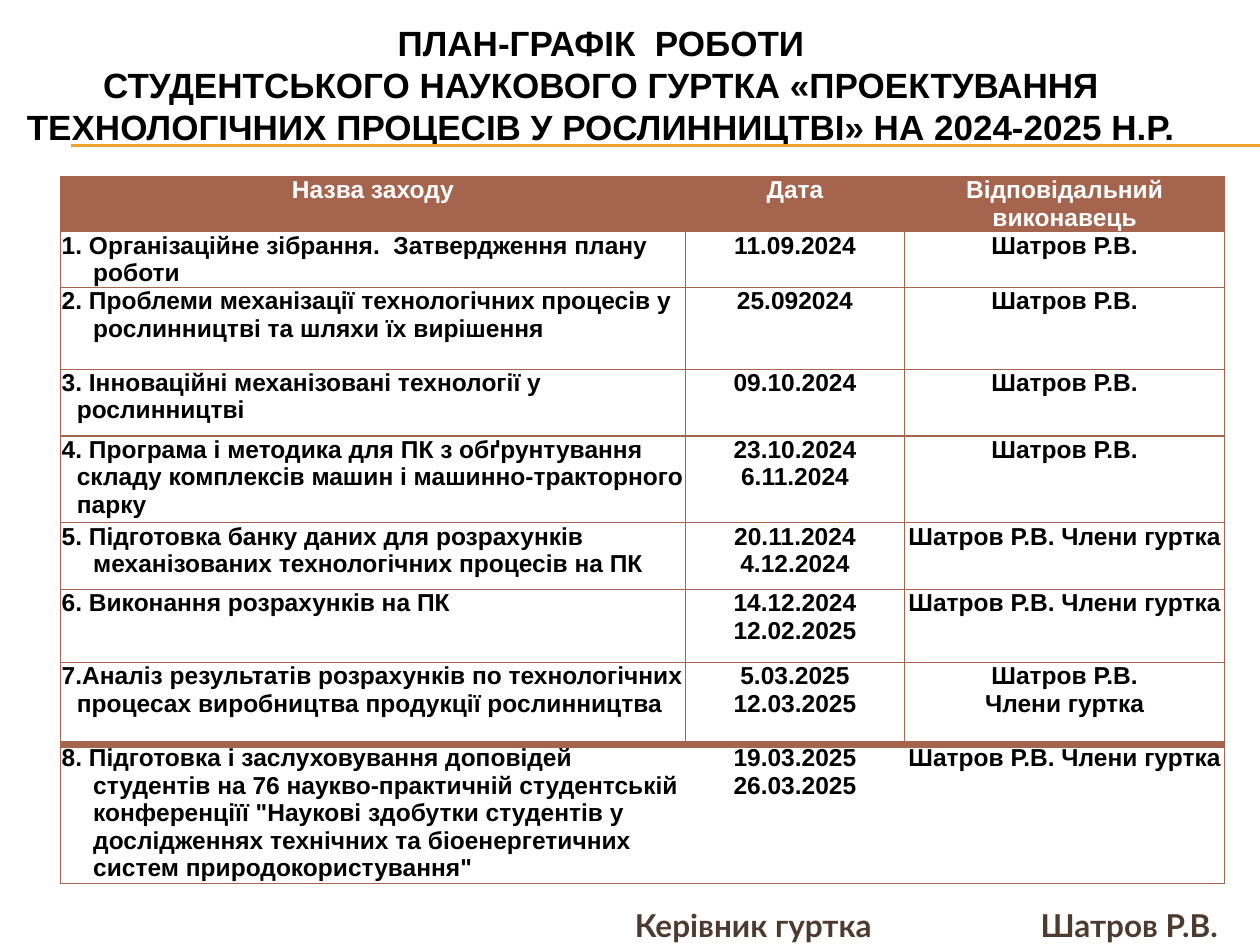
from dataclasses import dataclass

from lxml import etree
from pptx import Presentation
from pptx.dml.color import RGBColor
from pptx.enum.shapes import MSO_CONNECTOR
from pptx.enum.text import MSO_ANCHOR, MSO_AUTO_SIZE, PP_ALIGN
from pptx.oxml.ns import qn
from pptx.util import Inches, Pt

CENTER, LEFT = PP_ALIGN.CENTER, PP_ALIGN.LEFT
MIDDLE, TOP = MSO_ANCHOR.MIDDLE, MSO_ANCHOR.TOP
TITLE_ONLY = 5


@dataclass(frozen=True)
class Theme:
    text: str = "000000"
    header_text: str = "FFFFFF"
    table: str = "A5644E"
    rule: str = "F0A22E"
    signature: str = "4E3B30"
    font: str = "Arial"
    signature_font: str = "Lato"
    title_size: int = 20
    table_size: int = 14
    signature_size: int = 18
    border: float = 0.79
    thick_border: float = 4
    rule_width: float = 0.75


LEADER = "Шатров Р.В."
LEADER_AND_MEMBERS = "Шатров Р.В. Члени гуртка"
HEADERS = ["Назва заходу", "Дата", "Відповідальний виконавець"]
COLUMN_WIDTHS = [4.96, 1.74, 2.54]
HEADER_HEIGHT = 0.44
# Activity, hanging indent, dates, responsible person, row height
ACTIVITIES = [
    ("1. Організаційне зібрання.  Затвердження плану роботи",
     0.25, "11.09.2024", LEADER, 0.44),
    ("2. Проблеми механізації технологічних процесів у рослинництві та шляхи їх вирішення",
     0.25, "25.092024", LEADER, 0.65),
    ("3. Інноваційні механізовані технології у рослинництві",
     0.12, "09.10.2024", LEADER, 0.53),
    ("4. Програма і методика для ПК з обґрунтування складу комплексів машин "
     "і машинно-тракторного парку",
     0.12, "23.10.2024\n6.11.2024", LEADER, 0.69),
    ("5. Підготовка банку даних для розрахунків механізованих технологічних процесів на ПК",
     0.25, "20.11.2024\n4.12.2024", LEADER_AND_MEMBERS, 0.53),
    ("6. Виконання розрахунків на ПК",
     0, "14.12.2024\n12.02.2025", LEADER_AND_MEMBERS, 0.58),
    ("7.Аналіз результатів розрахунків по технологічних процесах виробництва "
     "продукції рослинництва",
     0.12, "5.03.2025\n12.03.2025", "Шатров Р.В.\nЧлени гуртка", 0.65),
    ("8. Підготовка і заслуховування доповідей студентів на 76 наукво-практичній "
     "студентській конференціїї \"Наукові здобутки студентів у дослідженнях технічних "
     "та біоенергетичних систем природокористування\"",
     0.25, "19.03.2025\v26.03.2025", LEADER_AND_MEMBERS, 1.1),
]


class SlideBuilder:
    def __init__(self, slide, theme):
        self.slide = slide
        self.theme = theme

    def style(self, paragraph, size, color, alignment, font=None):
        paragraph.alignment = alignment
        paragraph.font.name = font or self.theme.font
        paragraph.font.size = Pt(size)
        paragraph.font.bold = True
        paragraph.font.color.rgb = RGBColor.from_string(color)

    def title(self, text, left, top, width, height):
        shape = self.slide.shapes.title
        shape.left, shape.top = Inches(left), Inches(top)
        shape.width, shape.height = Inches(width), Inches(height)
        frame = shape.text_frame
        frame.word_wrap = True
        frame.auto_size = MSO_AUTO_SIZE.NONE
        frame.vertical_anchor = MIDDLE
        paragraph = frame.paragraphs[0]
        paragraph.text = text
        self.style(paragraph, self.theme.title_size, self.theme.text, CENTER)

    def rule(self, left, right, top):
        line = self.slide.shapes.add_connector(
            MSO_CONNECTOR.STRAIGHT, Inches(left), Inches(top), Inches(right), Inches(top))
        line.line.color.rgb = RGBColor.from_string(self.theme.rule)
        line.line.width = Pt(self.theme.rule_width)
        etree.SubElement(line._element.spPr, qn("a:effectLst"))

    def borders(self, cell, widths):
        """Set left, right, top and bottom lines; a width of 0 hides a line."""
        properties = cell._tc.get_or_add_tcPr()
        for index, (side, width) in enumerate(zip("LRTB", widths)):
            line = etree.Element(qn(f"a:ln{side}"), w=str(Pt(width)))
            if width:
                fill = etree.SubElement(line, qn("a:solidFill"))
                etree.SubElement(fill, qn("a:srgbClr"), val=self.theme.table)
            else:
                etree.SubElement(line, qn("a:noFill"))
            properties.insert(index, line)

    def cell(self, cell, text, color, alignment=CENTER, indent=0):
        cell.margin_left = cell.margin_right = Inches(0.01)
        cell.margin_top = cell.margin_bottom = 0
        cell.vertical_anchor = TOP
        cell.text = text
        for paragraph in cell.text_frame.paragraphs:
            self.style(paragraph, self.theme.table_size, color, alignment)
            if indent:
                properties = paragraph._p.get_or_add_pPr()
                properties.set("marL", str(Inches(indent)))
                properties.set("indent", str(-Inches(indent)))

    def schedule(self, left, top):
        theme = self.theme
        heights = [HEADER_HEIGHT] + [activity[-1] for activity in ACTIVITIES]
        table = self.slide.shapes.add_table(
            len(heights), len(COLUMN_WIDTHS), Inches(left), Inches(top),
            Inches(sum(COLUMN_WIDTHS)), Inches(sum(heights))).table
        for column, width in zip(table.columns, COLUMN_WIDTHS):
            column.width = Inches(width)
        for row, height in zip(table.rows, heights):
            row.height = Inches(height)

        for column, header in enumerate(HEADERS):
            self.cell(table.cell(0, column), header, theme.header_text)
        for row, (name, indent, dates, person, _) in enumerate(ACTIVITIES, 1):
            self.cell(table.cell(row, 0), name, theme.text, LEFT, indent)
            self.cell(table.cell(row, 1), dates, theme.text)
            self.cell(table.cell(row, 2), person, theme.text)

        last_row, last_column = len(heights) - 1, len(COLUMN_WIDTHS) - 1
        for row in range(len(heights)):
            inner = 0 if row == last_row else theme.border
            above = theme.thick_border if row == last_row else theme.border
            below = theme.thick_border if row == last_row - 1 else theme.border
            for column in range(len(COLUMN_WIDTHS)):
                cell = table.cell(row, column)
                if row == 0:
                    cell.fill.solid()
                    cell.fill.fore_color.rgb = RGBColor.from_string(theme.table)
                else:
                    cell.fill.background()
                self.borders(cell, (theme.border if column == 0 else inner,
                                    theme.border if column == last_column else inner,
                                    above, below))

    def signature(self, parts, tab_stops, left, top, width, height):
        """Write one line whose parts start at the given tab stops."""
        frame = self.slide.shapes.add_textbox(
            Inches(left), Inches(top), Inches(width), Inches(height)).text_frame
        frame.word_wrap = True
        frame.margin_right = 0
        paragraph = frame.paragraphs[0]
        paragraph.text = "".join(f"\t{part}" for part in parts)
        paragraph.space_before = Pt(3.6)
        self.style(paragraph, self.theme.signature_size, self.theme.signature, LEFT,
                   self.theme.signature_font)
        tabs = etree.Element(qn("a:tabLst"))
        for stop in tab_stops:
            etree.SubElement(tabs, qn("a:tab"), pos=str(Inches(stop)), algn="l")
        paragraph._p.pPr.find(qn("a:defRPr")).addprevious(tabs)


def main():
    presentation = Presentation()
    presentation.slide_width, presentation.slide_height = Inches(10), Inches(7.5)
    slide = presentation.slides.add_slide(presentation.slide_layouts[TITLE_ONLY])
    builder = SlideBuilder(slide, Theme())
    for top in (1.15, 1.16):
        builder.rule(0.56, 10, top)
    builder.title("ПЛАН-ГРАФІК  РОБОТИ\vСТУДЕНТСЬКОГО НАУКОВОГО ГУРТКА «ПРОЕКТУВАННЯ "
                  "ТЕХНОЛОГІЧНИХ ПРОЦЕСІВ У РОСЛИННИЦТВІ» НА 2024-2025 Н.Р.",
                  0.02, 0.21, 9.5, 0.92)
    builder.schedule(0.48, 1.4)
    builder.signature(["Керівник гуртка", LEADER], [4.4, 7.62], 0.54, 7.14, 9.22, 0.34)
    presentation.save("out.pptx")


if __name__ == "__main__":
    main()
